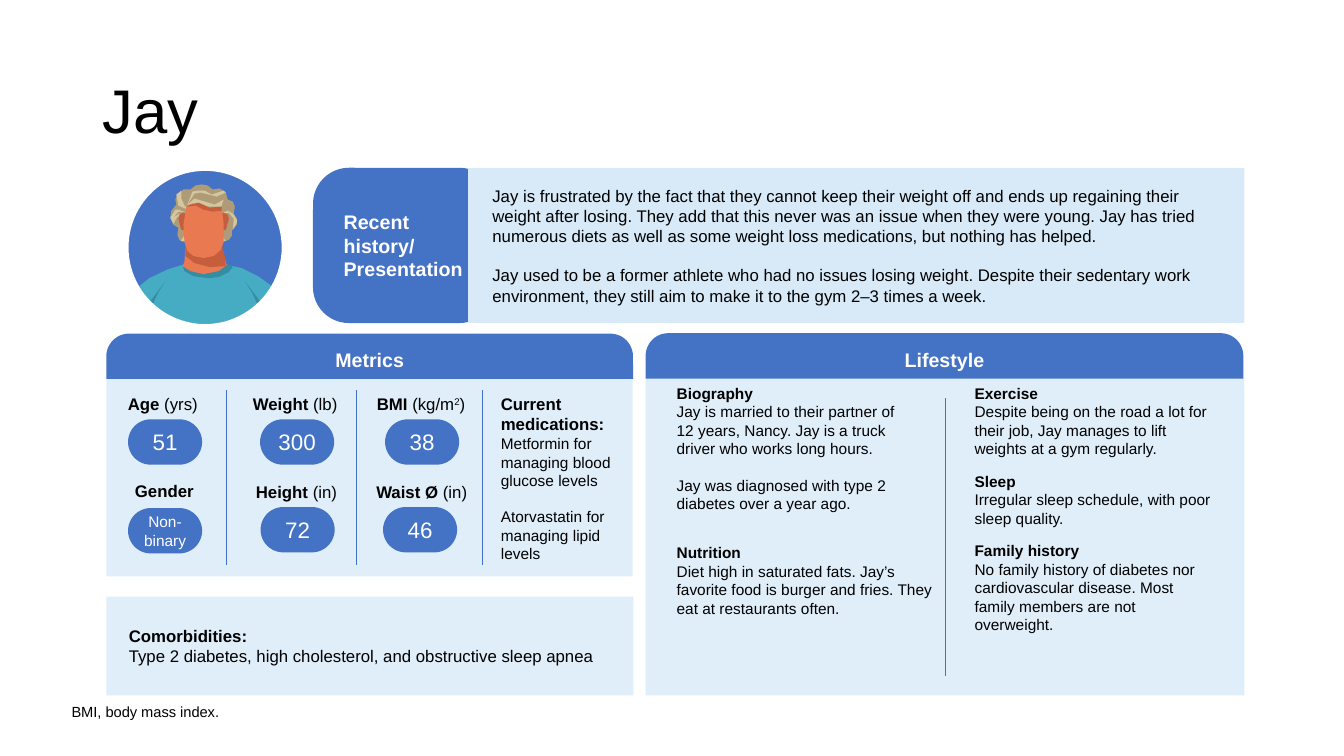
import pptx
import pptx.util
import pptx.dml.color
import pptx.enum.shapes
import pptx.enum.text
import pptx.oxml.ns
from lxml import etree

SHAPE = pptx.enum.shapes.MSO_SHAPE
ALIGN = pptx.enum.text.PP_ALIGN
ANCHOR = pptx.enum.text.MSO_ANCHOR
CELL = 91440  # one grid step: columns and rows are a tenth of an inch
WIDE, HIGH = 133.33, 75
BLUE, PALE, BLACK, WHITE = "4472C4", "D8EAF8", "000000", "FFFFFF"
PAD, SMALL, NONE = (1, 0.5, 1, 0.5), (0.4,) * 4, (0,) * 4

# Portrait outlines: x and y in turn, in grid steps
SHIRT = (20.2, 25.9, 21.7, 26.1, 24, 26.6, 25.6, 27.4, 27, 28.4, 25.4, 30.4, 23.6, 31.5, 21.5, 32.1,
         19.1, 32.1, 17, 31.5, 15.2, 30.4, 13.8, 28.4, 14.8, 27.6, 16.7, 26.7, 18.7, 26.1)
FOLD = (16.4, 27.9, 15.7, 29, 15.2, 30.1, 14.9, 29.9)
COLLAR = (18.6, 26.1, 21.7, 26.1, 22.9, 26.3, 23.1, 26.5, 22.7, 27, 21.7, 27.5, 20.7, 27.6,
          19.2, 27.4, 18.3, 26.9, 18.1, 26.3)
HAIR = (23.2, 21.2, 23.3, 20.5, 23.1, 20, 22.6, 19.8, 22.4, 19.1, 21.8, 18.7, 21.1, 18.8, 20.6, 18.4,
        20, 18.3, 19.4, 18.4, 18.9, 18.8, 18.2, 18.8, 17.6, 19.3, 17.4, 19.8, 17.5, 20.3, 17, 20.9,
        16.9, 21.6, 17.2, 22.3, 17.7, 22.6, 17.6, 23.3, 17.8, 23.8, 18.4, 24, 22.1, 24, 22.7, 23.8,
        23, 23.4, 23, 22.9, 23.5, 22.3, 23.5, 21.7)
LOCKS = (
    (21.9, 22.6, 22.1, 23.5, 22.4, 23.9, 21.3, 24.1, 21.3, 23.8),
    (18.5, 22.5, 18.8, 22.8, 19.2, 24.1, 17.9, 23.9, 18.3, 23.4),
    (22.6, 20.9, 23.1, 21.2, 23.5, 21.8, 23.5, 22.1, 23.1, 22.8, 23.2, 21.7, 22.7, 21.1, 21.9, 21.2),
    (17.7, 20.8, 18.5, 21.1, 17.7, 21, 17.2, 21.6, 17.8, 21.2, 18.3, 21.4, 17.6, 21.5, 17.2, 22.2,
     16.9, 21.6, 17.4, 20.8),
    (18, 18.9, 18, 19.7, 18.3, 20.4, 18.9, 20.9, 17.7, 20.4, 17.5, 19.3),
    (19.7, 18.9, 20.3, 18.9, 21, 19.3, 22.2, 18.9, 22.4, 19.1, 21.5, 19.5, 19.9, 19.1, 19.3, 19.2,
     18.6, 20.3, 19.1, 19))
FRINGE = (19.3, 19.7, 20.3, 20, 21.3, 20.3, 22.2, 19.8, 21.9, 20.7, 21.8, 20.5, 20.6, 20.5,
          19.8, 20.2, 19, 20.2, 18.5, 20.4)
NECK = (18.4, 24.6, 18.3, 26, 18.1, 26.4, 18.9, 26.9, 20.2, 27.2, 21.7, 26.9, 22.5, 26.3, 22, 24.6)
SHADE = (22.4, 26.4, 22.3, 25.4, 22, 24.3, 21, 24.1, 18.4, 24.3, 18.4, 25.4, 19.3, 26.1, 20.8, 26.5)
EAR = (18.9, 22.3, 18.8, 22.7, 18.4, 22.9, 18, 22.8, 17.9, 22.5, 17.7, 21.7, 17.8, 21.3,
       18.2, 21.1, 18.6, 21.2, 18.8, 21.5)
FACE = (22, 20.6, 20.8, 20.6, 19.7, 20.2, 19.1, 20.2, 18.5, 20.5, 18.2, 22.3, 18.3, 24, 18.6, 24.9,
        19.2, 25.4, 20.2, 25.6, 21.2, 25.4, 21.9, 24.8, 22.2, 24, 22.2, 22.3)
BROW = (22, 20.9, 22, 20.5, 20.8, 20.6, 19.7, 20.1, 18.6, 20.4, 18.6, 20.5, 19.4, 20.4,
        20.2, 20.8, 21.1, 21)


def grid(*steps):
    return [round(step * CELL) for step in steps]


def tint(code):
    return pptx.dml.color.RGBColor.from_string(code)


def paint(shape, code):
    shape.shadow.inherit = False
    shape.line.fill.background()
    shape.fill.solid()
    shape.fill.fore_color.rgb = tint(code)


def style(run, size, code, bold):
    font = run.font
    font.name, font.size, font.bold = "Arial", pptx.util.Pt(size), bold
    font.color.rgb = tint(code)


def write(shape, text, size, code=BLACK, head=False, gap=0, align=ALIGN.LEFT,
          anchor=ANCHOR.TOP, pad=PAD, wrap=True):
    """Fill a shape; head makes the first line bold, gap parts the last one."""
    frame = shape.text_frame
    frame.text, frame.word_wrap, frame.vertical_anchor = text, wrap, anchor
    frame.margin_left, frame.margin_top, frame.margin_right, frame.margin_bottom = grid(*pad)
    for rank, para in enumerate(frame.paragraphs):
        para.alignment = align
        for run in para.runs:
            style(run, size, code, head and rank == 0)
    if gap:
        frame.paragraphs[-1].space_before = pptx.util.Pt(gap)
    return frame.paragraphs[0]


def block(slide, kind, box, code, curve=()):
    shape = slide.shapes.add_shape(kind, *grid(*box))
    paint(shape, code)
    for rank, share in enumerate(curve):
        shape.adjustments[rank] = share
    return shape


def panel(slide, *box):
    shape = block(slide, SHAPE.RECTANGLE, box, PALE)
    node = next(shape._element.spPr.iter(pptx.oxml.ns.qn("a:srgbClr")))
    etree.SubElement(node, pptx.oxml.ns.qn("a:alpha")).set("val", "80000")


def note(slide, box, text, size, **look):
    return write(slide.shapes.add_textbox(*grid(*box)), text, size, **look)


def rule(slide, left, top, end):
    line = slide.shapes.add_connector(pptx.enum.shapes.MSO_CONNECTOR.STRAIGHT,
                                      *grid(left, top, left, end))
    line.line.color.rgb, line.line.width = tint(BLUE), pptx.util.Pt(0.5)
    etree.SubElement(line._element.spPr, pptx.oxml.ns.qn("a:effectLst"))


def banner(slide, box, text):
    shape = block(slide, SHAPE.ROUND_2_SAME_RECTANGLE, box, BLUE, (0.5, 0))
    write(shape, text, 14, WHITE, True, align=ALIGN.CENTER, anchor=ANCHOR.MIDDLE)


def label(slide, left, top, wide, name, *unit):
    para = note(slide, (left, top, wide, 3), name, 12, head=True, wrap=False)
    for rank, part in enumerate(unit):
        run = para.add_run()
        run.text = part
        style(run, 12, BLACK, False)
        if rank == 1:
            run._r.get_or_add_rPr().set("baseline", "30000")


def pill(slide, left, top, text, size=16):
    shape = block(slide, SHAPE.ROUNDED_RECTANGLE, (left, top, 7.35, 4.5), BLUE, [0.5])
    write(shape, text, size, WHITE, align=ALIGN.CENTER, anchor=ANCHOR.MIDDLE, pad=SMALL)


def sketch(slide, code, *outlines):
    pen = None
    for flat in outlines:
        dots = [grid(*dot) for dot in zip(flat[::2], flat[1::2])]
        if pen:
            pen.move_to(*dots[0])
        else:
            pen = slide.shapes.build_freeform(*dots[0])
        pen.add_line_segments(dots[1:])
    paint(pen.convert_to_shape(), code)


def flip(flat, span):
    return [n if rank % 2 else span - n for rank, n in enumerate(flat)]


def avatar(slide):
    ring = (12.65, 16.85, 15.4, 15.4)
    block(slide, SHAPE.OVAL, ring, BLUE)
    for code, *outlines in (
            ("46ACC3", SHIRT), ("348DA2", FOLD), ("348DA2", flip(FOLD, 40.7)), ("348DA2", COLLAR),
            ("AF9B78", HAIR), ("D2C79E", *LOCKS), ("D2C79E", FRINGE), ("E97951", NECK),
            ("C65E3D", SHADE), ("C65E3D", EAR), ("C65E3D", flip(EAR, 40.4)), ("E97951", FACE),
            ("C65E3D", BROW)):
        sketch(slide, code, *outlines)
    edge = block(slide, SHAPE.OVAL, ring, WHITE)
    edge.fill.background()
    edge.line.color.rgb, edge.line.width = tint(WHITE), pptx.util.Pt(1.5)


def main():
    deck = pptx.Presentation()
    deck.slide_width, deck.slide_height = grid(WIDE, HIGH)
    slide = deck.slides.add_slide(deck.slide_layouts[5])

    # Title and footnote
    title = slide.shapes.title
    title.left, title.top, title.width, title.height = grid(9.2, 4, 115, 14.5)
    write(title, "Jay", 44, anchor=ANCHOR.MIDDLE).line_spacing = 0.9
    note(slide, (7.1, 68, 94.6, 3.5), "BMI, body mass index.", 10.5,
         anchor=ANCHOR.BOTTOM, pad=NONE).line_spacing = 0.9

    # Panels and heads
    panel(slide, 10.55, 37.6, 52.2, 19.6)
    panel(slide, 64.05, 37.5, 59.4, 31.5)
    banner(slide, (10.55, 33.1, 52.25, 4.5), "Metrics")
    tab = block(slide, SHAPE.ROUNDED_RECTANGLE, (31.05, 16.65, 18.1, 15.4), BLUE, [0.231])
    write(tab, "Recent history/\vPresentation", 14, WHITE, True,
          anchor=ANCHOR.MIDDLE, pad=(2, 0.5, 1, 0.5))

    # Metrics
    for facts in ((11.7, 38.6, 9.3, "Age ", "(yrs)"), (12.4, 47.2, 7.9, "Gender"),
                  (24.1, 38.6, 10.7, "Weight ", "(lb)"), (24.4, 47.3, 10.4, "Height ", "(in)"),
                  (36.4, 38.6, 11, "BMI ", "(kg/m", "2", ")"), (36.35, 47.3, 11, "Waist Ø ", "(in)")):
        label(slide, *facts)
    for left in (22.45, 35.4, 47.9):
        rule(slide, left, 38.7, 56.1)
    note(slide, (48.7, 38.6, 13.2, 18), "Current medications:\nMetformin for managing blood "
         "glucose levels\nAtorvastatin for managing lipid levels", 11, head=True,
         gap=12.65).runs[0].font.size = pptx.util.Pt(12)
    for facts in ((12.7, 41.6, "51"), (12.7, 50.4, "Non-binary", 11), (25.8, 41.6, "300"),
                  (25.85, 50.3, "72"), (38.2, 41.6, "38"), (38, 50.3, "46")):
        pill(slide, *facts)

    # Lifestyle, left to right
    for left, top, wide, tall, gap, text in (
            (66.15, 37.6, 25.7, 15.8, 12.65, "Biography\nJay is married to their partner of 12 years, "
             "Nancy. Jay is a truck driver who works long hours.\nJay was diagnosed with type 2 "
             "diabetes over a year ago."),
            (66.15, 53.4, 27.6, 8.4, 0, "Nutrition\nDiet high in saturated fats. Jay’s favorite food "
             "is burger and fries. They eat at restaurants often."),
            (95.7, 37.6, 25.6, 8.4, 0, "Exercise\nDespite being on the road a lot for their job, Jay "
             "manages to lift weights at a gym regularly."),
            (95.7, 46.3, 26.1, 6.6, 0, "Sleep\nIrregular sleep schedule, with poor sleep quality.")):
        note(slide, (left, top, wide, tall), text, 11, head=True, gap=gap)

    # Comorbidities and history
    panel(slide, 10.55, 59.2, 52.3, 9.8)
    note(slide, (11.8, 61.6, 48.7, 5), "Comorbidities:\nType 2 diabetes, high cholesterol, and "
         "obstructive sleep apnea", 12, head=True)
    story = block(slide, SHAPE.RECTANGLE, (46.45, 16.65, 77, 15.4), PALE)
    write(story, "Jay is frustrated by the fact that they cannot keep their weight off and ends up "
          "regaining their weight after losing. They add that this never was an issue when they "
          "were young. Jay has tried numerous diets as well as some weight loss medications, but "
          "nothing has helped.\nJay used to be a former athlete who had no issues losing weight. "
          "Despite their sedentary work environment, they still aim to make it to the gym 2–3 "
          "times a week.", 12, gap=13.8, anchor=ANCHOR.MIDDLE, pad=(2.4, 2, 2.4, 2))
    note(slide, (95.7, 53.2, 26.1, 10.3), "Family history\nNo family history of diabetes nor "
         "cardiovascular disease. Most family members are not overweight.", 11, head=True)
    rule(slide, 93.75, 39.5, 67.1)
    banner(slide, (64.05, 33.05, 59.3, 4.5), "Lifestyle")
    avatar(slide)
    deck.save("out.pptx")


if __name__ == "__main__":
    main()
